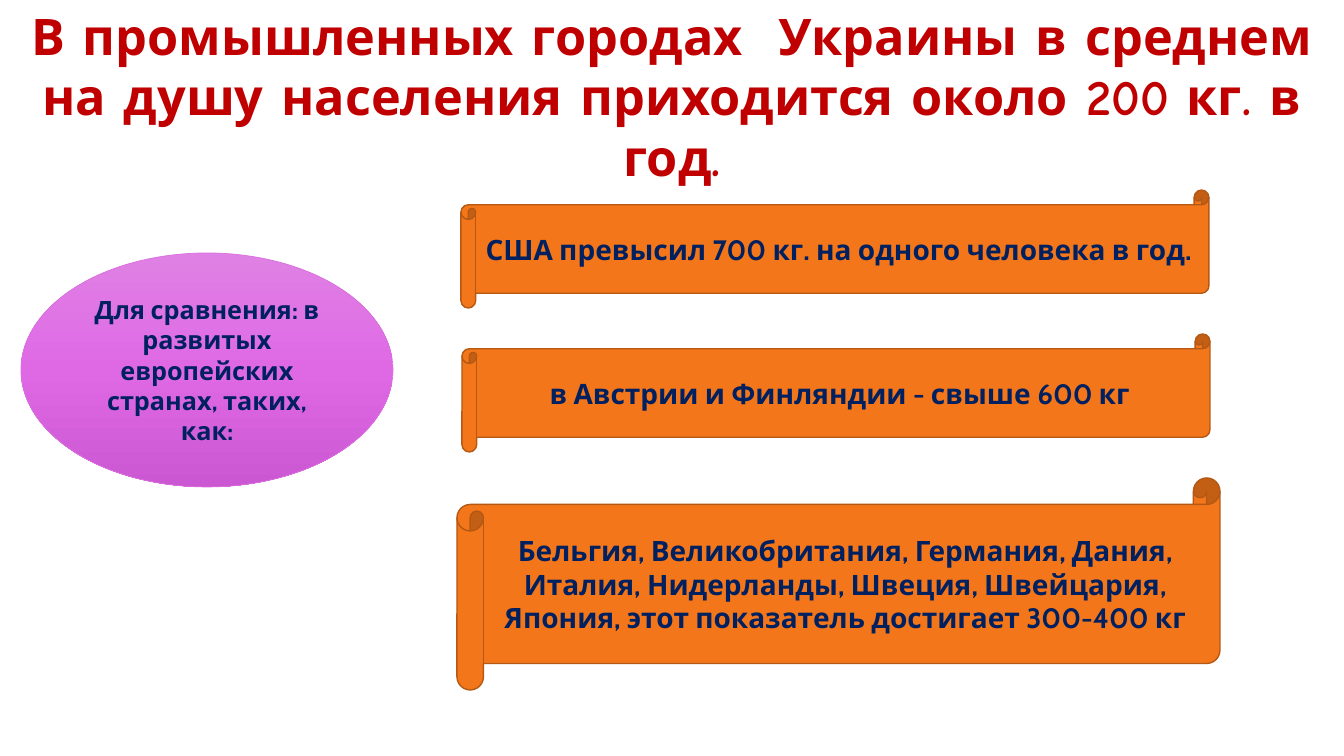
from copy import deepcopy

from pptx import Presentation
from pptx.dml.color import RGBColor
from pptx.enum.shapes import MSO_SHAPE as Shape
from pptx.enum.text import MSO_ANCHOR as Anchor, PP_ALIGN as Align
from pptx.oxml.ns import qn
from pptx.util import Emu, Pt

PX = 914400 / 100.8
RED = RGBColor(0xC0, 0x00, 0x00)
NAVY = RGBColor(0x00, 0x20, 0x60)
ORANGE = RGBColor(0xF3, 0x77, 0x1A)
BROWN = RGBColor(0xB4, 0x58, 0x13)
ORCHID_EDGE = RGBColor(0xDA, 0x6F, 0xDF)
ORCHID_STOPS = [
    (0, RGBColor(0xDF, 0x81, 0xE4)),
    (0.5, RGBColor(0xDF, 0x69, 0xE5)),
    (1, RGBColor(0xCC, 0x57, 0xD2)),
]

TITLE = ("В промышленных городах\u00a0 Украины в среднем на душу населения "
         "приходится около\u00a0200 кг. в год.")
COMPARISON = "Для сравнения: в развитых европейских странах, таких, как:"
SCROLLS = [
    ((457, 478, 763, 212),
     "Бельгия, Великобритания, Германия, Дания, Италия, Нидерланды, Швеция, "
     "Швейцария, Япония, этот показатель достигает 300-400 кг"),
    ((462, 334, 748, 118), "в Австрии и Финляндии - свыше 600 кг"),
    ((461, 190, 748, 118), "США превысил 700 кг. на одного человека в год."),
]


def px(box):
    return [Emu(round(length * PX)) for length in box]


def write(shape, text, font_name, size, color, anchor):
    frame = shape.text_frame
    frame.word_wrap = True
    frame.vertical_anchor = anchor
    paragraph = frame.paragraphs[0]
    paragraph.text = text
    paragraph.alignment = Align.CENTER
    font = paragraph.font
    font.name = font_name
    font.size = Pt(size)
    font.bold = True
    font.color.rgb = color


def add_outlined(slide, kind, box, line_color, line_width):
    shape = slide.shapes.add_shape(kind, *px(box))
    shape.shadow.inherit = False
    shape.line.color.rgb = line_color
    shape.line.width = Pt(line_width)
    return shape


def add_title(slide, box):
    title = slide.shapes.add_textbox(*px(box))
    write(title, TITLE, "Comic Neue", 36, RED, Anchor.TOP)


def add_comparison(slide, box):
    ellipse = add_outlined(slide, Shape.OVAL, box, ORCHID_EDGE, 0.5)
    fill = ellipse.fill
    fill.gradient()
    fill.gradient_angle = 270
    stop_list = ellipse._element.spPr.find(qn("a:gradFill")).find(qn("a:gsLst"))
    stop_list.append(deepcopy(stop_list[0]))
    for stop, (position, color) in zip(fill.gradient_stops, ORCHID_STOPS):
        stop.position = position
        stop.color.rgb = color
    write(ellipse, COMPARISON, "Cabin", 18, NAVY, Anchor.MIDDLE)


def add_scroll(slide, box, text):
    scroll = add_outlined(slide, Shape.HORIZONTAL_SCROLL, box, BROWN, 1)
    scroll.fill.solid()
    scroll.fill.fore_color.rgb = ORANGE
    write(scroll, text, "Cabin", 20, NAVY, Anchor.MIDDLE)


def main():
    presentation = Presentation()
    presentation.slide_width, presentation.slide_height = px((1344, 756))
    slide = presentation.slides.add_slide(presentation.slide_layouts[6])
    add_title(slide, (0, 0, 1344, 132))
    add_comparison(slide, (21, 253, 372, 234))
    for box, text in SCROLLS:
        add_scroll(slide, box, text)
    presentation.save("out.pptx")


if __name__ == "__main__":
    main()
